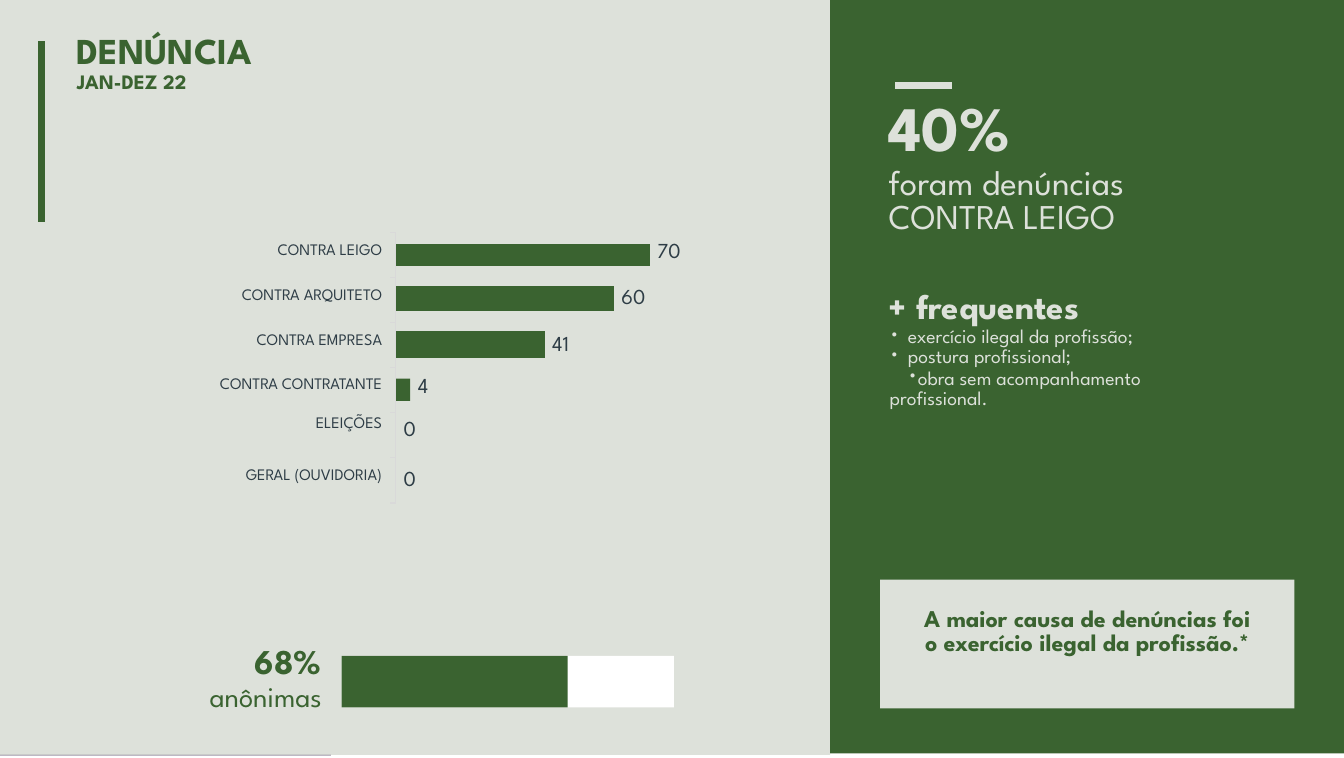
from lxml.etree import SubElement
from pptx import Presentation
from pptx.dml.color import RGBColor
from pptx.enum.shapes import MSO_CONNECTOR, MSO_SHAPE
from pptx.enum.text import MSO_ANCHOR, MSO_AUTO_SIZE, PP_ALIGN
from pptx.oxml.ns import qn
from pptx.util import Cm, Pt

GREEN = RGBColor(0x3A, 0x63, 0x30)
PALE = RGBColor(0xDD, 0xE1, 0xDA)
WHITE = RGBColor(0xFF, 0xFF, 0xFF)
SLATE = RGBColor(0x2E, 0x3D, 0x46)
GREY = RGBColor(0xD9, 0xD9, 0xD9)
PURPLE = RGBColor(0x47, 0x36, 0x5A)
FONT = "League Spartan"
NO_STYLE = "{2D5ABB26-0587-4C30-8999-92F81FD0307C}"
SIDES = ("margin_left", "margin_top", "margin_right", "margin_bottom")

# Paragraphs: text, size, bold, line spacing, space before, (left, first line) for bullets
TITLE = [("DENÚNCIA", 20.5, True, 23.1, 0, None),
         ("JAN-DEZ 22", 11.5, True, 12.3, 0, None)]
ANONYMOUS_SHARE = 0.68
ANONYMOUS = [("68%", 19.5, True, 21.9, 0, None),
             ("anônimas", 16, False, 17.7, 0, None)]
HIGHLIGHTS = [
    ("40%", 35.5, True, 40.5, 0, None),
    ("foram denúncias CONTRA LEIGO", 19.5, False, 19.1, 2.1, None),
    ("+ frequentes", 19.5, True, 22.8, 28, None),
    ("exercício ilegal da profissão;", 11, False, 11.5, 0, (0.38, -0.36)),
    ("postura profissional;", 11, False, 11.1, 0, (0.38, -0.36)),
    ("obra sem acompanhamento profissional.", 11, False, 11.2, 1.1, (0.02, 0.36)),
]
CONCLUSION = [("A maior causa de denúncias foi o exercício ilegal da profissão.*",
               13.5, True, 13.5, 0, None)]

COLUMN_WIDTHS = [3.86, 0.15, 0.43, 2.51, 1.37, 0.71, 0.74]
ROW_HEIGHTS = [0.43, 0.41, 0.48, 0.41, 0.53, 1.98, 0.71]
FIRST_BAR_COLUMN = 2
# Row, labels, top margin
LABELS = [
    (0, ["CONTRA LEIGO"], 0),
    (2, ["CONTRA ARQUITETO"], 0.05),
    (4, ["CONTRA EMPRESA"], 0.05),
    (5, ["CONTRA CONTRATANTE", "ELEIÇÕES"], 0.4),
    (6, ["GERAL (OUVIDORIA)"], 0.23),
]
LABEL_GAP = 13.6
# Row, column, value, left margin, top margin
VALUES = [
    (0, 6, "70", 0.15, 0),
    (2, 5, "60", 0.15, 0.06),
    (4, 4, "41", 0.15, 0.1),
    (5, 3, "4", 0, 0.41),
    (5, 2, "0", 0.15, 1.26),
    (6, 2, "0", 0.15, 0.27),
]
ROWS_WITH_BARS = (0, 2, 4)
AXIS_X, AXIS_TOP, AXIS_BOTTOM, TICK_COUNT = 7.83, 4.6, 9.96, 7


def write(frame, paragraphs, color, align=PP_ALIGN.LEFT, margins=(0, 0, 0, 0)):
    settings = {"word_wrap": True, "auto_size": MSO_AUTO_SIZE.NONE,
                "vertical_anchor": MSO_ANCHOR.TOP}
    settings.update(zip(SIDES, map(Cm, margins)))
    for name, value in settings.items():
        setattr(frame, name, value)
    add_paragraphs(frame, paragraphs, color, align)


def add_paragraphs(frame, paragraphs, color, align):
    for index, (text, size, bold, spacing, before, bullet) in enumerate(paragraphs):
        paragraph = frame.add_paragraph() if index else frame.paragraphs[0]
        paragraph.alignment = align
        paragraph.space_before = Pt(before)
        if spacing:
            paragraph.line_spacing = Pt(spacing)
        run = paragraph.add_run()
        run.text = text
        for name, value in {"name": FONT, "size": Pt(size), "bold": bold}.items():
            setattr(run.font, name, value)
        run.font.color.rgb = color
        if bullet:
            properties = paragraph._p.get_or_add_pPr()
            properties.set("marL", str(Cm(bullet[0])))
            properties.set("indent", str(Cm(bullet[1])))
            SubElement(properties, qn("a:buFont"), typeface=FONT)
            SubElement(properties, qn("a:buChar"), char="•")


def add_block(slide, left, top, width, height, color):
    shape = slide.shapes.add_shape(MSO_SHAPE.RECTANGLE, *map(Cm, (left, top, width, height)))
    shape.shadow.inherit = False
    shape.fill.solid()
    shape.fill.fore_color.rgb = color
    shape.line.fill.background()
    return shape


def add_line(slide, start_x, start_y, end_x, end_y, color, width):
    line = slide.shapes.add_connector(MSO_CONNECTOR.STRAIGHT,
                                      *map(Cm, (start_x, start_y, end_x, end_y)))
    line.line.color.rgb = color
    line.line.width = Pt(width)
    SubElement(line._element.spPr, qn("a:effectLst"))


def add_text(slide, left, top, width, height, *args):
    box = slide.shapes.add_textbox(*map(Cm, (left, top, width, height)))
    write(box.text_frame, *args)


def fill_cell(cell, texts, size, gap, align, margins):
    for side, margin in zip(SIDES, margins):
        setattr(cell, side, Cm(margin))
    paragraphs = [(text, size, False, None, gap if index else 0, None)
                  for index, text in enumerate(texts)]
    add_paragraphs(cell.text_frame, paragraphs, SLATE, align)


def add_bar_table(slide):
    frame = slide.shapes.add_table(len(ROW_HEIGHTS), len(COLUMN_WIDTHS), Cm(3.83), Cm(4.83),
                                   Cm(sum(COLUMN_WIDTHS)), Cm(sum(ROW_HEIGHTS)))
    table = frame.table
    table.first_row = table.horz_banding = False
    table._tbl.tblPr.find(qn("a:tableStyleId")).text = NO_STYLE
    for column, width in zip(table.columns, COLUMN_WIDTHS):
        column.width = Cm(width)
    for row, height in zip(table.rows, ROW_HEIGHTS):
        row.height = Cm(height)
    # A bar fills the columns before its value
    bar_ends = {row: column for row, column, *_ in VALUES if row in ROWS_WITH_BARS}
    filled = {(row, 0) for row, *_ in LABELS}
    filled |= {(row, column) for row, column, *_ in VALUES}
    for row in range(len(ROW_HEIGHTS)):
        for column in range(len(COLUMN_WIDTHS)):
            cell = table.cell(row, column)
            in_bar = FIRST_BAR_COLUMN <= column < bar_ends.get(row, 0)
            cell.fill.solid()
            cell.fill.fore_color.rgb = GREEN if in_bar else PALE
            if (row, column) not in filled:
                for side in SIDES:
                    setattr(cell, side, 0)
                end = cell.text_frame.paragraphs[0]._p.get_or_add_endParaRPr()
                end.set("sz", "100")
    for row, texts, top in LABELS:
        fill_cell(table.cell(row, 0), texts, 9, LABEL_GAP, PP_ALIGN.RIGHT, (0, top, 0.13, 0))
    for row, column, value, left, top in VALUES:
        fill_cell(table.cell(row, column), [value], 12, 0, PP_ALIGN.LEFT, (left, top, 0, 0))


def main():
    presentation = Presentation()
    presentation.slide_width, presentation.slide_height = Cm(26.6), Cm(15.01)
    slide = presentation.slides.add_slide(presentation.slide_layouts[5])

    add_block(slide, 0, 0, 16.43, 14.95, PALE)
    add_block(slide, 16.43, 0, 10.17, 14.92, GREEN)
    add_block(slide, 6.76, 12.99, 6.58, 1.02, WHITE)
    add_block(slide, 6.76, 12.99, 6.58 * ANONYMOUS_SHARE, 1.02, GREEN)
    conclusion = add_block(slide, 17.42, 11.48, 8.2, 2.55, PALE)
    write(conclusion.text_frame, CONCLUSION, GREEN, PP_ALIGN.CENTER, (0.76, 0.56, 0.76, 0))

    add_bar_table(slide)
    add_block(slide, AXIS_X, 7.5, 0.29, 0.44, GREEN)
    add_line(slide, AXIS_X, AXIS_TOP, AXIS_X, AXIS_BOTTOM, GREY, 0.6)
    tick_step = (AXIS_BOTTOM - AXIS_TOP) / (TICK_COUNT - 1)
    for index in range(TICK_COUNT):
        tick_y = AXIS_TOP + index * tick_step
        add_line(slide, AXIS_X - 0.11, tick_y, AXIS_X, tick_y, GREY, 0.6)

    add_line(slide, 0.82, 0.82, 0.82, 4.4, GREEN, 3.6)
    add_line(slide, 17.72, 1.69, 18.85, 1.69, PALE, 3.6)
    add_block(slide, 0, 14.95, 6.55, 0.01, PURPLE)

    title = slide.shapes.title
    place = {"left": 1.42, "top": 0.56, "width": 14.78, "height": 2.29}
    for name, value in place.items():
        setattr(title, name, Cm(value))
    write(title.text_frame, TITLE, GREEN, PP_ALIGN.LEFT, (0.1, 0.05, 0, 0))
    slide.shapes._spTree.append(title._element)

    add_text(slide, 3.55, 12.7, 2.82, 1.47, ANONYMOUS, GREEN, PP_ALIGN.RIGHT, (0, 0.03, 0, 0))
    add_text(slide, 17.55, 1.78, 6.12, 6.35, HIGHLIGHTS, PALE, PP_ALIGN.LEFT, (0.04, 0.05, 0, 0))
    presentation.save("out.pptx")


if __name__ == "__main__":
    main()
